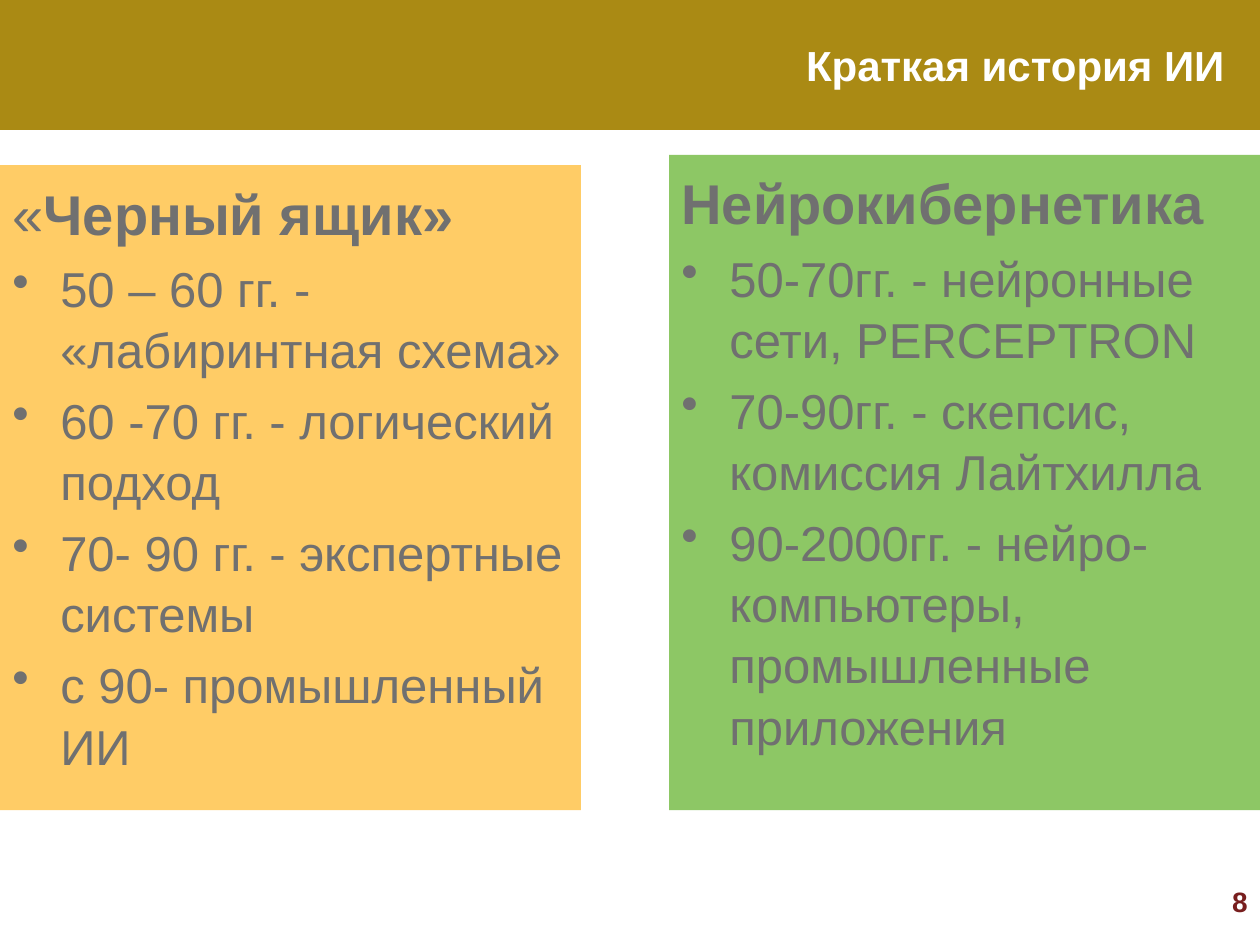
"""Build the slide comparing two branches in the history of AI."""
import pptx
import pptx.dml.color
import pptx.enum.shapes
import pptx.enum.text
import pptx.oxml
import pptx.oxml.ns
import pptx.util

Inches = pptx.util.Inches
Pt = pptx.util.Pt
RGB = pptx.dml.color.RGBColor.from_string
RIGHT = pptx.enum.text.PP_ALIGN.RIGHT
MIDDLE = pptx.enum.text.MSO_ANCHOR.MIDDLE

THEME = {
    "font": "Arial",
    "banner": RGB("AA8A14"), "orange": RGB("FFCC66"), "green": RGB("8DC765"),
    "white": RGB("FFFFFF"), "body": RGB("707070"), "number": RGB("781E1E"),
    "title_size": Pt(24), "heading_size": Pt(32),
    "item_size": Pt(28), "number_size": Pt(16),
}
PANELS = [
    (0, 1.31, 4.61, 5.12, "orange", [("«", False), ("Черный ящик»", True)], [
        "50 – 60 гг. - «лабиринтная схема»",
        "60 -70 гг. - логический подход",
        "70- 90 гг. - экспертные системы",
        "с 90- промышленный ИИ",
    ]),
    (5.31, 1.23, 4.69, 5.2, "green", [("Нейрокибернетика", True)], [
        "50-70гг. - нейронные сети, PERCEPTRON",
        "70-90гг. - скепсис, комиссия Лайтхилла",
        "90-2000гг. - нейро-компьютеры, промышленные приложения",
    ]),
]


def add_run(p, text, size, color, bold):
    r = p.add_run()
    r.text = text
    r.font.color.rgb = THEME[color]
    style = {"name": THEME["font"], "size": THEME[size], "bold": bold}
    for key, value in style.items():
        setattr(r.font, key, value)


def add_box(s, left, top, width, height, fill, frame):
    sp = s.shapes.add_shape(
        pptx.enum.shapes.MSO_SHAPE.RECTANGLE,
        Inches(left), Inches(top), Inches(width), Inches(height))
    sp.shadow.inherit = False
    sp.fill.solid()
    sp.fill.fore_color.rgb = THEME[fill]
    sp.line.fill.background()
    for key, value in frame.items():
        setattr(sp.text_frame, key, value)
    return sp


prs = pptx.Presentation()
prs.slide_width, prs.slide_height = Inches(10), Inches(7.5)
s = prs.slides.add_slide(prs.slide_layouts[6])

sp = s.shapes.add_textbox(Inches(7.17), Inches(6.95), Inches(2.83), Inches(0.4))
sp.text_frame.word_wrap = True
sp.text_frame.vertical_anchor = MIDDLE
p = sp.text_frame.paragraphs[0]
p.alignment = RIGHT
add_run(p, "8", "number_size", "number", True)

sp = add_box(s, 0, 0, 10, 1.03, "banner", {
    "word_wrap": True, "vertical_anchor": MIDDLE,
    "margin_left": Inches(0.79), "margin_right": Inches(0.28)})
sp.line.color.rgb = THEME["banner"]
sp.line.width = Pt(0.75)
p = sp.text_frame.paragraphs[0]
p.alignment = RIGHT
add_run(p, "Краткая история ИИ", "title_size", "white", True)

for left, top, width, height, fill, heading, items in PANELS:
    sp = add_box(s, left, top, width, height, fill, {
        "word_wrap": True, "vertical_anchor": pptx.enum.text.MSO_ANCHOR.TOP,
        "margin_top": Inches(0.09)})
    tf = sp.text_frame
    p = tf.paragraphs[0]
    for text, bold in heading:
        add_run(p, text, "heading_size", "body", bold)
    for item in items:
        p = tf.add_paragraph()
        p.space_before = Pt(5.6)
        bullet = pptx.oxml.parse_xml(
            f'<a:buChar {pptx.oxml.ns.nsdecls("a")} char="•"/>')
        p._p.get_or_add_pPr().append(bullet)
        add_run(p, item, "item_size", "body", False)
    for p in tf.paragraphs:
        p.alignment = pptx.enum.text.PP_ALIGN.LEFT
        p.line_spacing = 1.04
        pPr = p._p.get_or_add_pPr()
        pPr.set("marL", str(Inches(0.38)))
        pPr.set("indent", str(-Inches(0.38)))

prs.save("out.pptx")
